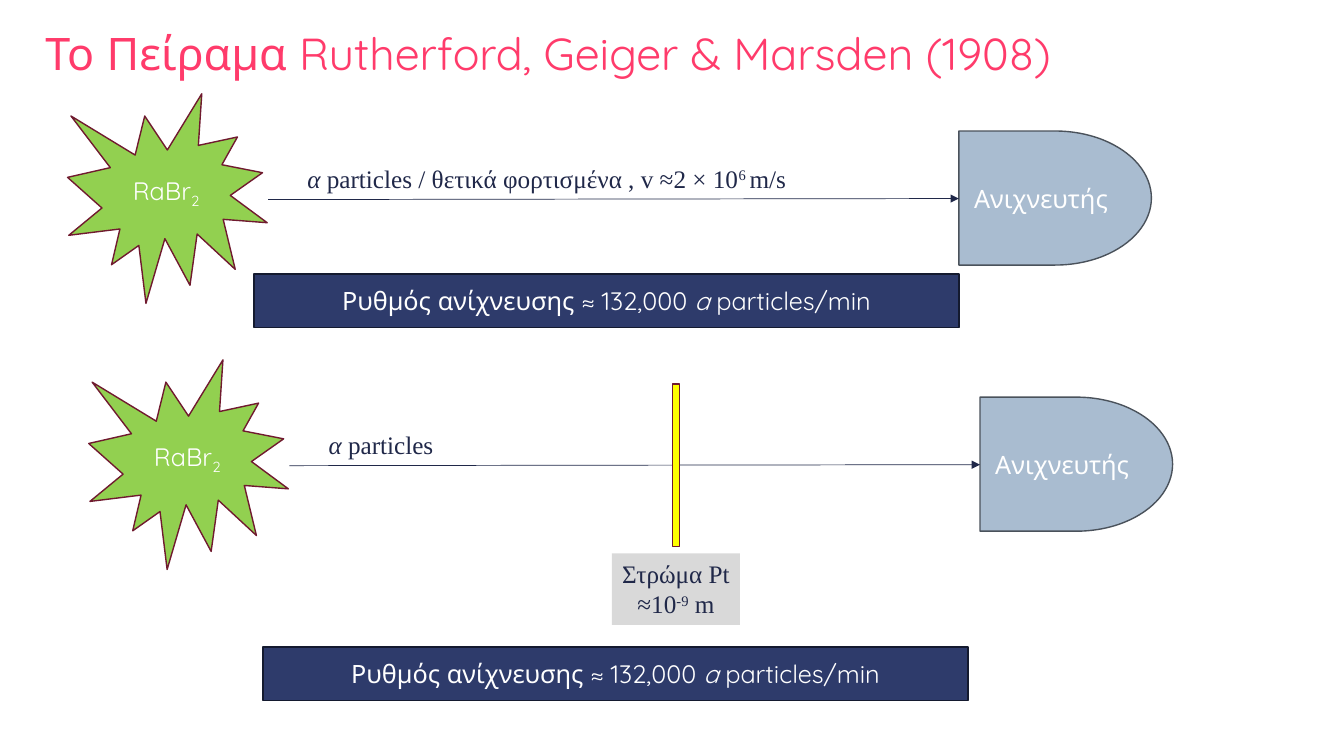
"""Build the Rutherford, Geiger and Marsden experiment slide."""
from dataclasses import dataclass
from typing import Optional

from lxml.etree import SubElement
from pptx import Presentation
from pptx.dml.color import RGBColor
from pptx.enum.shapes import MSO_CONNECTOR as CONN, MSO_SHAPE as SHAPE
from pptx.enum.text import MSO_ANCHOR as ANCHOR, MSO_AUTO_SIZE as AUTO, PP_ALIGN as ALIGN
from pptx.oxml.ns import qn
from pptx.util import Emu, Pt

PX = 9144
SANS, SERIF = "Quicksand", "Times New Roman"
PINK = RGBColor(0xFF, 0x3B, 0x6B)
WHITE = RGBColor(0xFF, 0xFF, 0xFF)
INK = RGBColor(0x20, 0x28, 0x49)
GREEN = RGBColor(0x92, 0xD0, 0x50)
MAROON = RGBColor(0x70, 0x1A, 0x2F)
STEEL = RGBColor(0xA9, 0xBC, 0xD0)
SLATE = RGBColor(0x4A, 0x52, 0x5B)
NAVY = RGBColor(0x2E, 0x3B, 0x6B)
DARK = RGBColor(0x14, 0x1A, 0x2F)
YELLOW = RGBColor(0xFF, 0xFF, 0x00)
GREY = RGBColor(0xD9, 0xD9, 0xD9)


@dataclass(frozen=True)
class Run:
    text: str
    italic: bool = False
    baseline: int = 0


@dataclass(frozen=True)
class Box:
    kind: SHAPE
    at: tuple[int, int, int, int]
    fill: RGBColor
    line: Optional[RGBColor] = None
    runs: tuple[Run, ...] = ()
    font: str = SANS
    color: RGBColor = WHITE
    fit: bool = False


@dataclass(frozen=True)
class Beam:
    dx: int
    dy: int
    label_width: int
    label: tuple[Run, ...]
    extras: tuple[Box, ...] = ()


SOURCE = Box(SHAPE.EXPLOSION1, (67, 93, 198, 208), GREEN, MAROON,
             (Run("RaBr"), Run("2", baseline=-25)))
DETECTOR = Box(SHAPE.FLOWCHART_DELAY, (951, 130, 191, 133), STEEL, SLATE,
               (Run("Ανιχνευτής"),))
RATE = (Run("Ρυθμός ανίχνευσης ≈ 132,000 "), Run("a", italic=True), Run(" particles/min"))
RATE_BARS = tuple(Box(SHAPE.RECTANGLE, (x, y, 699, 53), NAVY, DARK, RATE)
                  for x, y in ((252, 272), (261, 642)))
FOIL = Box(SHAPE.RECTANGLE, (667, 381, 7, 161), YELLOW, MAROON)
FOIL_LABEL = Box(SHAPE.RECTANGLE, (607, 549, 127, 71), GREY, None,
                 (Run("Στρώμα Pt"), Run("\n"), Run("≈10"), Run("-9", baseline=30), Run(" m")),
                 SERIF, INK, True)
ALPHA = Run("α", italic=True)
BEAMS = (
    Beam(0, 0, 545, (ALPHA, Run(" particles / θετικά φορτισμένα , v ≈2 × 10"),
                     Run("6 ", baseline=30), Run("m/s"))),
    Beam(21, 264, 132, (ALPHA, Run(" particles")), (FOIL, FOIL_LABEL)),
)


def px(*values: int) -> list[Emu]:
    return [Emu(v * PX) for v in values]


def add_runs(p, runs: tuple[Run, ...], font: str, color: RGBColor, size: int = 18) -> None:
    for run in runs:
        if run.text == "\n":
            p.add_line_break()
            continue
        r = p.add_run()
        r.text = run.text
        r.font.name, r.font.size = font, Pt(size)
        r.font.color.rgb = color
        if run.italic:
            r.font.italic = True
        if run.baseline:
            r._r.get_or_add_rPr().set("baseline", str(run.baseline * 1000))


def add_box(shapes, box: Box, dx: int = 0, dy: int = 0) -> None:
    x, y, w, h = box.at
    sp = shapes.add_shape(box.kind, *px(x + dx, y + dy, w, h))
    sp.shadow.inherit = False
    sp.fill.solid()
    sp.fill.fore_color.rgb = box.fill
    if box.line is None:
        sp.line.fill.background()
    else:
        sp.line.color.rgb = box.line
        sp.line.width = Pt(1)
    if not box.runs:
        return
    tf = sp.text_frame
    tf.word_wrap = not box.fit
    tf.auto_size = AUTO.SHAPE_TO_FIT_TEXT if box.fit else AUTO.NONE
    tf.vertical_anchor = ANCHOR.TOP if box.fit else ANCHOR.MIDDLE
    p = tf.paragraphs[0]
    p.alignment = ALIGN.CENTER
    add_runs(p, box.runs, box.font, box.color)


def add_arrow(shapes, x1: int, y1: int, x2: int, y2: int) -> None:
    cx = shapes.add_connector(CONN.STRAIGHT, *px(x1, y1, x2, y2))
    cx.line.color.rgb = INK
    cx.line.width = Pt(0.5)
    SubElement(cx.line._get_or_add_ln(), qn("a:tailEnd"), type="triangle")
    SubElement(cx._element.spPr, qn("a:effectLst"))


def add_beam(shapes, beam: Beam) -> None:
    dx, dy = beam.dx, beam.dy
    for box in (SOURCE, DETECTOR):
        add_box(shapes, box, dx, dy)
    add_arrow(shapes, 266 + dx, 198 + dy, 951 + dx, 197 + dy)
    tf = shapes.add_textbox(*px(295 + dx, 157 + dy, beam.label_width, 40)).text_frame
    tf.word_wrap = True
    tf.auto_size = AUTO.SHAPE_TO_FIT_TEXT
    add_runs(tf.paragraphs[0], beam.label, SERIF, INK)
    for box in beam.extras:
        add_box(shapes, box)


def add_title(slide) -> None:
    sp = slide.shapes.title
    sp.left, sp.top, sp.width, sp.height = px(35, 19, 1150, 73)
    tf = sp.text_frame
    tf.word_wrap = True
    tf.auto_size = AUTO.NONE
    tf.vertical_anchor = ANCHOR.MIDDLE
    p = tf.paragraphs[0]
    p.alignment = ALIGN.LEFT
    p.line_spacing = 0.9
    add_runs(p, (Run("Το Πείραμα Rutherford, Geiger & Marsden (1908)"),), SANS, PINK, 32)


def main() -> None:
    prs = Presentation()
    prs.slide_width, prs.slide_height = px(1333, 750)
    slide = prs.slides.add_slide(prs.slide_layouts[5])
    add_title(slide)
    for beam, bar in zip(BEAMS, RATE_BARS):
        shapes = slide.shapes.add_group_shape().shapes if beam.extras else slide.shapes
        add_beam(shapes, beam)
        add_box(slide.shapes, bar)
    prs.save("out.pptx")


if __name__ == "__main__":
    main()
